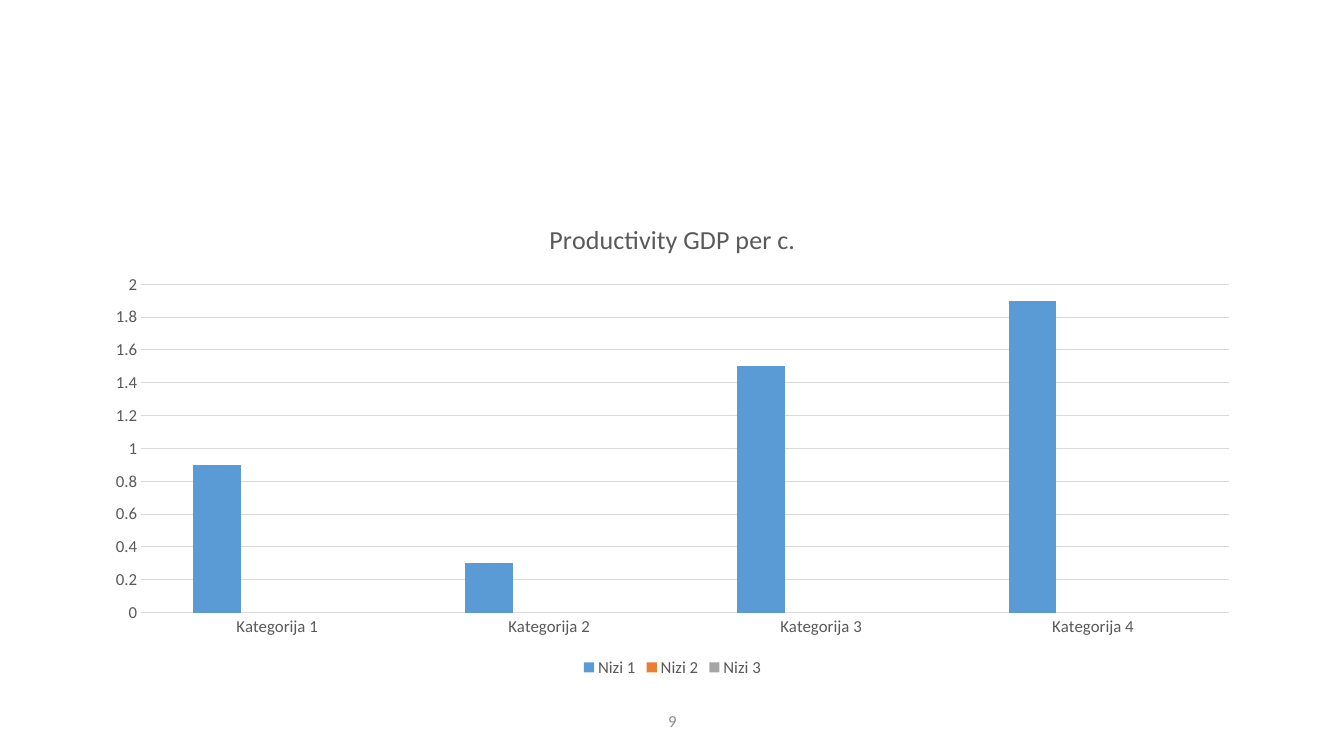
from pptx import Presentation
from pptx import util as u
from pptx.chart.data import CategoryChartData
from pptx.dml.color import RGBColor
from pptx.enum import chart as charts, text

FONT = "Calibri"
DARK_GREY = "595959"
LIGHT_GREY = "D9D9D9"
SERIES = [
    ("Nizi 1", [0.9, 0.3, 1.5, 1.9], "5B9BD5"),
    ("Nizi 2", [None] * 4, "ED7D31"),
    ("Nizi 3", [None] * 4, "A5A5A5"),
]


def color(hex_string):
    return RGBColor.from_string(hex_string)


def format_font(font, size, hex_string):
    font.name = FONT
    font.size = u.Pt(size)
    font.bold = False
    font.color.rgb = color(hex_string)


def format_line(line):
    line.color.rgb = color(LIGHT_GREY)
    line.width = u.Pt(0.75)


def format_axis(axis):
    axis.major_tick_mark = charts.XL_TICK_MARK.NONE
    axis.minor_tick_mark = charts.XL_TICK_MARK.NONE
    format_font(axis.tick_labels.font, 12, DARK_GREY)


def add_column_chart(slide, title, left, top, width, height):
    data = CategoryChartData()
    data.categories = [f"Kategorija {number}" for number in range(1, 5)]
    for name, values, _ in SERIES:
        data.add_series(name, values)
    chart = slide.shapes.add_chart(
        charts.XL_CHART_TYPE.COLUMN_CLUSTERED,
        u.Inches(left), u.Inches(top), u.Inches(width), u.Inches(height), data,
    ).chart
    format_font(chart.font, 10, "000000")

    chart.has_title = True
    chart.chart_title.include_in_layout = False
    title_frame = chart.chart_title.text_frame
    title_frame.text = title
    format_font(title_frame.paragraphs[0].runs[0].font, 18.6, DARK_GREY)

    chart.has_legend = True
    chart.legend.position = charts.XL_LEGEND_POSITION.BOTTOM
    chart.legend.include_in_layout = False
    format_font(chart.legend.font, 12, DARK_GREY)

    format_axis(chart.category_axis)
    format_line(chart.category_axis.format.line)
    format_axis(chart.value_axis)
    chart.value_axis.format.line.fill.background()
    format_line(chart.value_axis.major_gridlines.format.line)

    plot = chart.plots[0]
    plot.gap_width = 219
    plot.overlap = -27
    plot.vary_by_categories = False
    for series, (_, _, fill) in zip(plot.series, SERIES):
        series.format.fill.solid()
        series.format.fill.fore_color.rgb = color(fill)


def add_page_number(slide, number, left, top, width, height):
    box = slide.shapes.add_textbox(
        u.Inches(left), u.Inches(top), u.Inches(width), u.Inches(height))
    frame = box.text_frame
    frame.word_wrap = True
    frame.vertical_anchor = text.MSO_ANCHOR.MIDDLE
    frame.text = number
    paragraph = frame.paragraphs[0]
    paragraph.alignment = text.PP_ALIGN.CENTER
    format_font(paragraph.runs[0].font, 12, "8C8C8C")


def main():
    presentation = Presentation()
    presentation.slide_width = u.Inches(13.33)
    presentation.slide_height = u.Inches(7.5)
    slide = presentation.slides.add_slide(presentation.slide_layouts[6])
    add_column_chart(slide, "Productivity GDP per c.", 0.92, 2, 11.5, 4.76)
    add_page_number(slide, "9", 4.42, 6.95, 4.5, 0.4)
    presentation.save("out.pptx")


if __name__ == "__main__":
    main()
